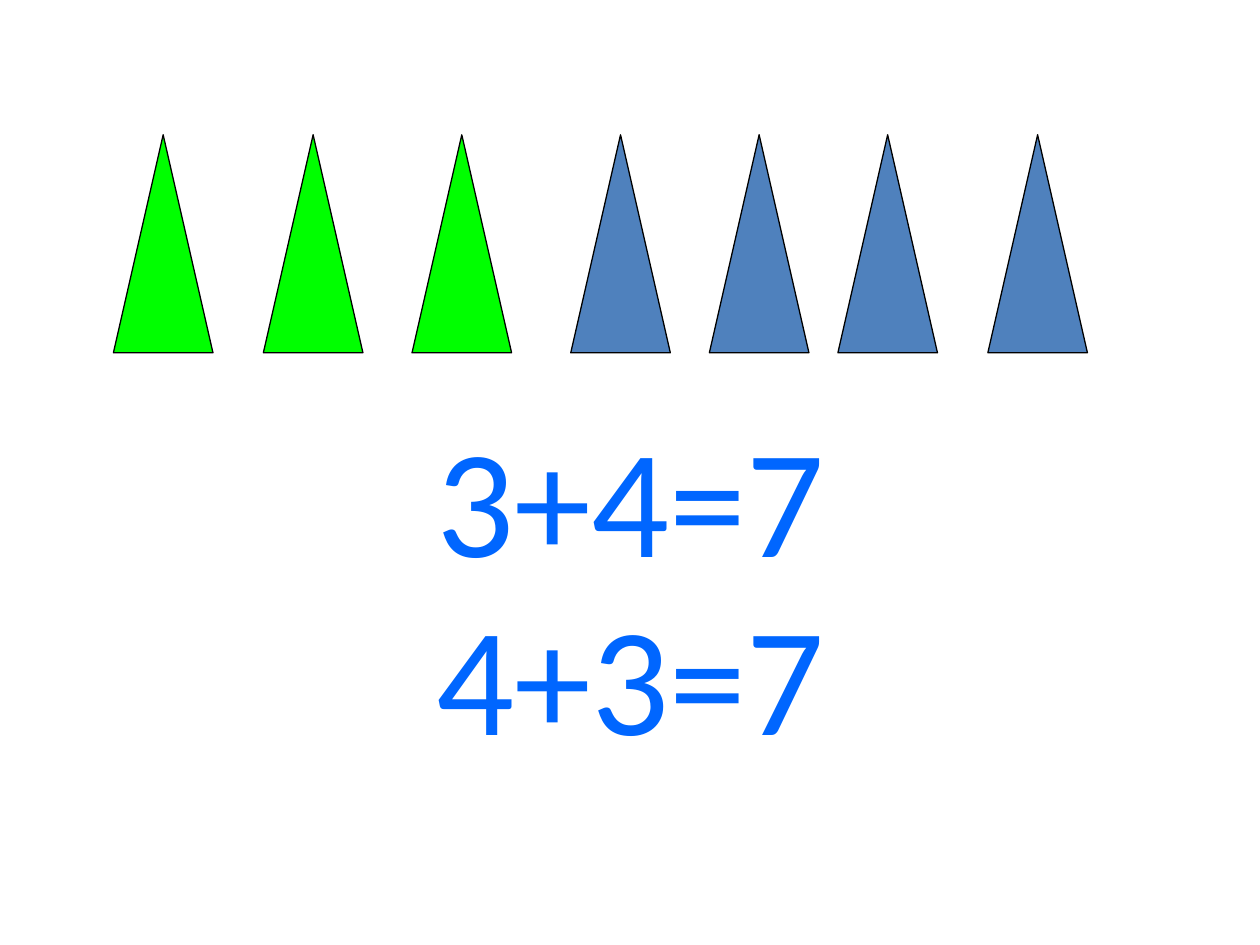
import pptx
import pptx.dml.color
import pptx.enum.shapes
import pptx.enum.text
import pptx.util
from pptx.util import Inches

EQUATIONS = ["3+4=7", "4+3=7"]
TRIANGLE_GROUPS = [
    ("00FF00", [0.9, 2.09, 3.27]),
    ("4F81BD", [4.53, 5.63, 6.65, 7.84]),
]
TRIANGLE_TOP, TRIANGLE_WIDTH, TRIANGLE_HEIGHT = 1.07, 0.79, 1.73


def color(value):
    return pptx.dml.color.RGBColor.from_string(value)


def add_triangle(slide, left, fill):
    triangle = slide.shapes.add_shape(
        pptx.enum.shapes.MSO_SHAPE.ISOSCELES_TRIANGLE,
        Inches(left), Inches(TRIANGLE_TOP),
        Inches(TRIANGLE_WIDTH), Inches(TRIANGLE_HEIGHT),
    )
    triangle.shadow.inherit = False
    triangle.fill.solid()
    triangle.fill.fore_color.rgb = color(fill)
    triangle.line.color.rgb = color("000000")
    triangle.line.width = pptx.util.Pt(0.75)


def add_equations(slide):
    box = slide.shapes.add_textbox(
        Inches(0.51), Inches(3.44), Inches(8.99), Inches(2.98)
    )
    frame = box.text_frame
    frame.word_wrap = True
    frame.text = "\n".join(EQUATIONS)
    for index, equation in enumerate(frame.paragraphs):
        equation.alignment = pptx.enum.text.PP_ALIGN.CENTER
        equation.line_spacing = 0.8
        equation.space_before = pptx.util.Pt(17 if index else 0)
        equation.font.name = "Calibri"
        equation.font.size = pptx.util.Pt(88)
        equation.font.color.rgb = color("0066FF")


def main():
    presentation = pptx.Presentation()
    presentation.slide_width = Inches(10)
    presentation.slide_height = Inches(7.5)
    slide = presentation.slides.add_slide(presentation.slide_layouts[6])
    add_equations(slide)
    for fill, lefts in TRIANGLE_GROUPS:
        for left in lefts:
            add_triangle(slide, left, fill)
    presentation.save("out.pptx")


if __name__ == "__main__":
    main()
